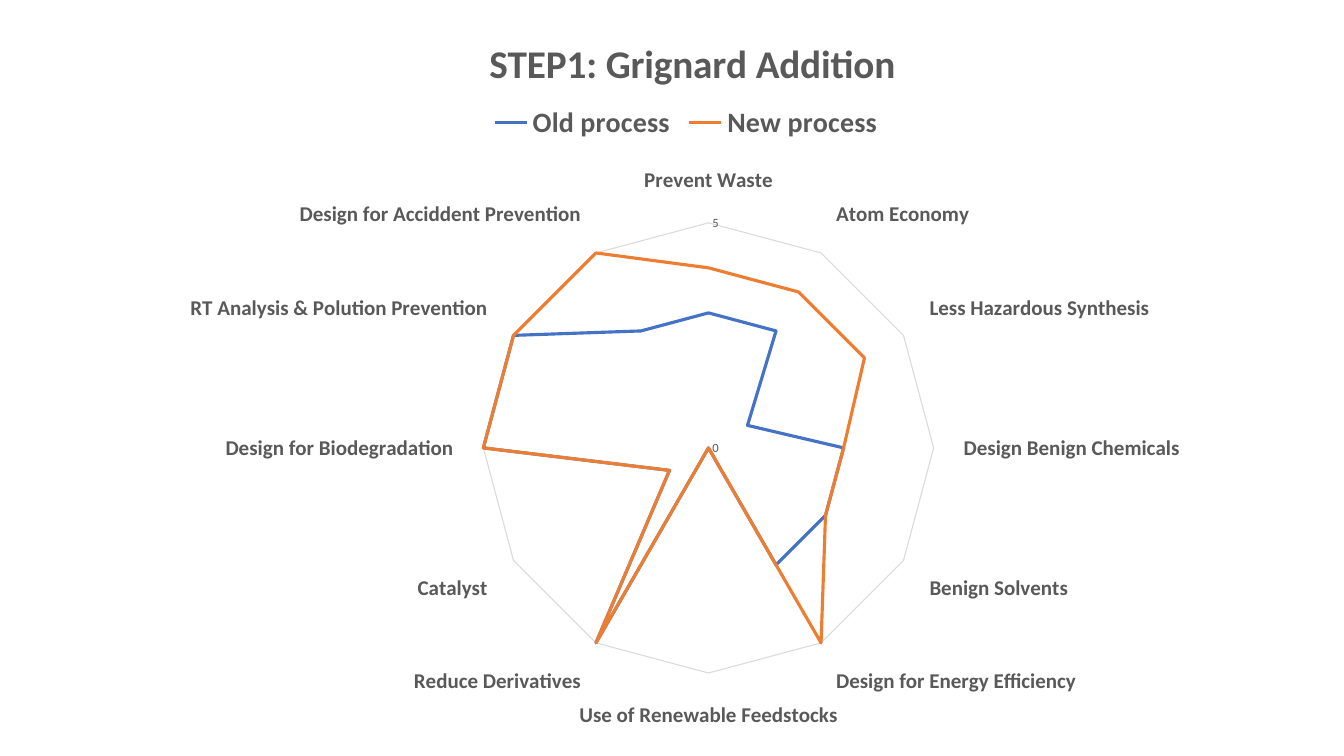
from lxml.etree import SubElement
from pptx import Presentation
from pptx.chart.data import CategoryChartData as ChartData
from pptx.dml.color import RGBColor
from pptx.enum.chart import XL_CHART_TYPE as ChartType
from pptx.enum.chart import XL_LEGEND_POSITION as LegendPosition
from pptx.enum.chart import XL_TICK_MARK as TickMark
from pptx.oxml.ns import qn
from pptx.util import Inches, Pt

GRAY = RGBColor(0x59, 0x59, 0x59)
LIGHT_GRAY = RGBColor(0xD9, 0xD9, 0xD9)
BLUE = RGBColor(0x44, 0x72, 0xC4)
ORANGE = RGBColor(0xED, 0x7D, 0x31)

PRINCIPLES = [
    "Prevent Waste",
    "Atom Economy",
    "Less Hazardous Synthesis",
    "Design Benign Chemicals",
    "Benign Solvents",
    "Design for Energy Efficiency",
    "Use of Renewable Feedstocks",
    "Reduce Derivatives",
    "Catalyst",
    "Design for Biodegradation",
    "RT Analysis & Polution Prevention",
    "Design for Acciddent Prevention",
]
PROCESSES = [
    ("Old process", BLUE, (3, 3, 1, 3, 3, 3, 0, 5, 1, 5, 5, 3)),
    ("New process", ORANGE, (4, 4, 4, 3, 3, 5, 0, 5, 1, 5, 5, 5)),
]


class RadarSlide:
    """Hold the style and the current slide, and draw its elements."""

    font_name = "Calibri"
    color = GRAY

    def __init__(self, presentation):
        """Add a blank slide."""
        self.width = presentation.slide_width
        self.height = presentation.slide_height
        self.slide = presentation.slides.add_slide(presentation.slide_layouts[6])

    def set_font(self, font, size, bold=False):
        """Apply the slide's typeface and text colour."""
        font.name = self.font_name
        font.size = Pt(size)
        font.bold = bold
        font.color.rgb = self.color

    def set_line(self, line, color, weight):
        """Colour and weigh a line."""
        line.color.rgb = color
        line.width = Pt(weight)

    def place(self, element, tag_before, **shares):
        """Fix a chart part at shares of the chart's size."""
        layout = element.find(qn("c:layout"))
        if layout is not None:
            element.remove(layout)
        layout = element.makeelement(qn("c:layout"))
        if tag_before:
            element.find(qn(tag_before)).addnext(layout)
        else:
            element.insert(0, layout)
        manual = SubElement(layout, qn("c:manualLayout"))
        if not tag_before:
            SubElement(manual, qn("c:layoutTarget")).set("val", "inner")
        for mode in ("xMode", "yMode"):
            SubElement(manual, qn(f"c:{mode}")).set("val", "edge")
        for name, share in shares.items():
            SubElement(manual, qn(f"c:{name}")).set("val", str(share))

    def add_radar(self, left, top, width, height, categories, series_rows):
        """Add a radar chart at shares of the slide's size."""
        data = ChartData(number_format="General")
        data.categories = categories
        for name, _, values in series_rows:
            data.add_series(name, values)
        chart = self.slide.shapes.add_chart(
            ChartType.RADAR,
            int(left * self.width), int(top * self.height),
            int(width * self.width), int(height * self.height), data,
        ).chart
        self.set_font(chart.font, 10)
        chart.plots[0].vary_by_categories = False
        for series, (_, color, _) in zip(chart.plots[0].series, series_rows):
            self.set_line(series.format.line, color, 2.25)
            series.smooth = False
        self.place(chart.element.find(".//" + qn("c:plotArea")), None,
                   x=0.324, y=0.296, w=0.391, h=0.598)
        return chart

    def style_axes(self, chart, maximum):
        """Show only the outer ring and the two end values."""
        principles, scores = chart.category_axis, chart.value_axis
        for axis, size, bold in ((principles, 15, True), (scores, 9, False)):
            axis.major_tick_mark = axis.minor_tick_mark = TickMark.NONE
            axis.tick_labels.number_format = "General"
            axis.tick_labels.number_format_is_linked = False
            self.set_font(axis.tick_labels.font, size, bold)
        principles.has_major_gridlines = False
        self.set_line(principles.format.line, LIGHT_GRAY, 0.75)
        scores.minimum_scale, scores.maximum_scale = 0, maximum
        scores.major_unit = maximum
        scores.has_major_gridlines = True
        self.set_line(scores.major_gridlines.format.line, LIGHT_GRAY, 0.75)
        scores.format.line.fill.background()

    def add_title(self, chart, text):
        """Add the chart title."""
        chart.has_title = True
        run = chart.chart_title.text_frame.paragraphs[0].add_run()
        run.text = text
        self.set_font(run.font, 28, True)
        self.place(chart.element.find(".//" + qn("c:title")), "c:tx",
                   x=0.323, y=0.04)

    def add_legend(self, chart):
        """Add the legend under the title."""
        chart.has_legend = True
        chart.legend.position = LegendPosition.TOP
        chart.legend.include_in_layout = False
        self.set_font(chart.legend.font, 20, True)
        self.place(chart.element.find(".//" + qn("c:legend")), "c:legendPos",
                   x=0.325, y=0.13, w=0.35, h=0.065)


def main():
    """Build and save the presentation."""
    presentation = Presentation()
    presentation.slide_width = Inches(13.33)
    presentation.slide_height = Inches(7.5)
    page = RadarSlide(presentation)
    chart = page.add_radar(0.082, 0, 0.857, 0.996, PRINCIPLES, PROCESSES)
    page.style_axes(chart, 5)
    page.add_title(chart, "STEP1: Grignard Addition")
    page.add_legend(chart)
    presentation.save("out.pptx")


if __name__ == "__main__":
    main()
